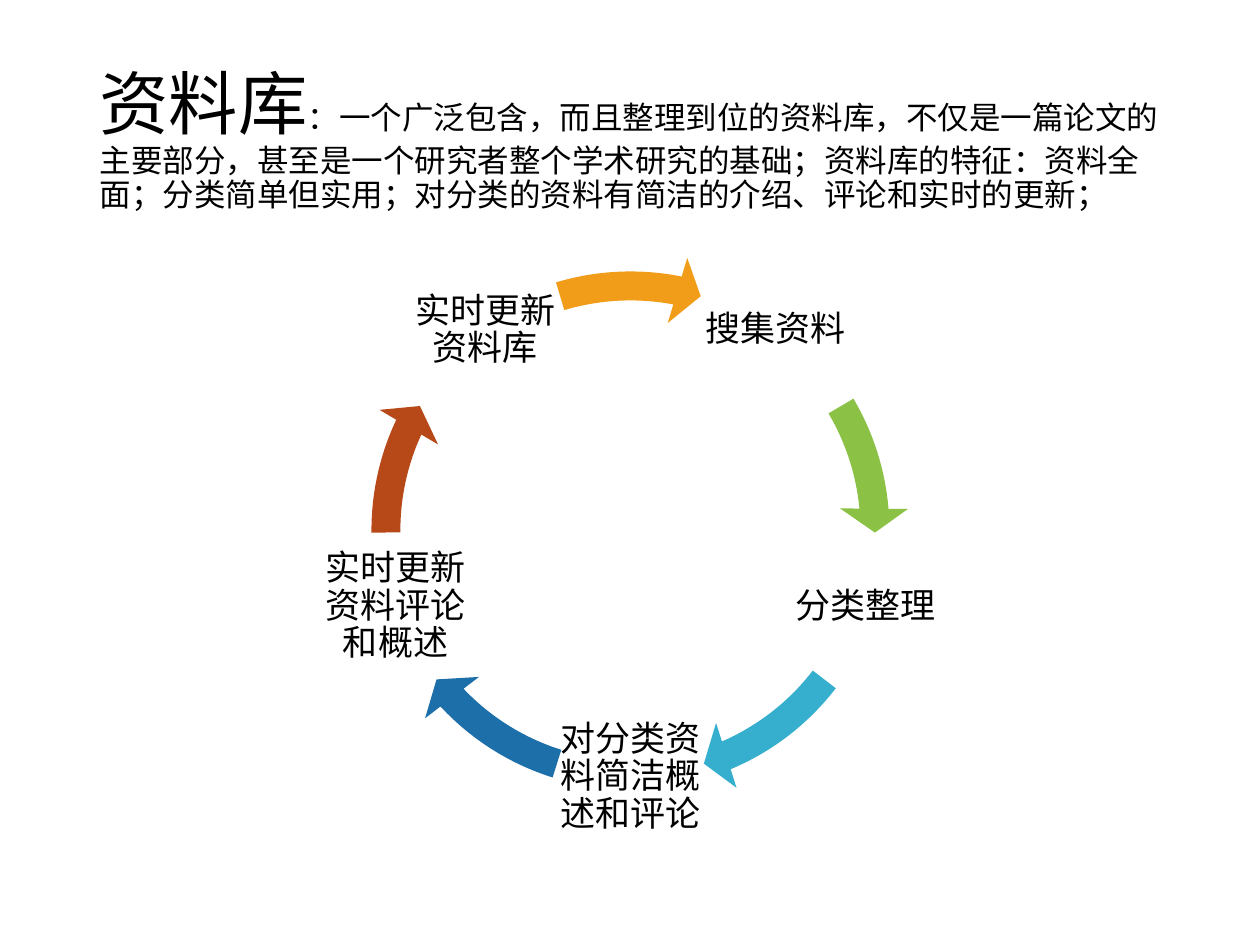
from dataclasses import dataclass
from math import cos, radians, sin

from pptx import Presentation
from pptx import util as u
from pptx.dml.color import RGBColor
from pptx.enum import lang, shapes, text


@dataclass(frozen=True)
class Theme:
    font: str = "Times New Roman"
    ink: str = "000000"
    heading: float = 39.6
    body: float = 18
    label: float = 20
    spacing: float = 0.9


THEME = Theme()
EMU_PER_PX = 914400 / 126

TITLE = "资料库"
DEFINITION = (
    "：一个广泛包含，而且整理到位的资料库，不仅是一篇论文的主要部分，"
    "甚至是一个研究者整个学术研究的基础；资料库的特征：资料全面；"
    "分类简单但实用；对分类的资料有简洁的介绍、评论和实时的更新；"
)
# Step, colour of the arrow that leaves it, arrow start and end in degrees
STEPS = [
    ("搜集资料", "8BC145", 329.43, 354.9),
    ("分类整理", "36AFCE", 37.55, 66.92),
    ("对分类资料简洁概述和评论", "1D6FA9", 107.48, 136.86),
    ("实时更新资料评论和概述", "B74919", 179.51, 204.98),
    ("实时更新资料库", "F19D19", 253.3, 281.1),
]


def px(length):
    return u.Emu(round(length * EMU_PER_PX))


def add_run(paragraph, words, size):
    run = paragraph.add_run()
    run.text = words
    run.font.name = THEME.font
    run.font.size = u.Pt(size)
    run.font.color.rgb = RGBColor.from_string(THEME.ink)
    run.font.language_id = lang.MSO_LANGUAGE_ID.SIMPLIFIED_CHINESE


def format_frame(frame, align):
    frame.word_wrap = True
    frame.auto_size = text.MSO_AUTO_SIZE.NONE
    frame.vertical_anchor = text.MSO_ANCHOR.MIDDLE
    paragraph = frame.paragraphs[0]
    paragraph.alignment = align
    paragraph.line_spacing = THEME.spacing
    return paragraph


def place_title(slide, left, top, width, height):
    title = slide.shapes.title
    title.left, title.top = px(left), px(top)
    title.width, title.height = px(width), px(height)
    paragraph = format_frame(title.text_frame, text.PP_ALIGN.LEFT)
    add_run(paragraph, TITLE, THEME.heading)
    add_run(paragraph, DEFINITION, THEME.body)


def add_step_label(cycle, words, center_x, center_y, side):
    label = cycle.shapes.add_textbox(
        px(center_x - side / 2), px(center_y - side / 2), px(side), px(side))
    frame = label.text_frame
    frame.margin_left = frame.margin_right = px(4)
    frame.margin_top = frame.margin_bottom = px(4)
    add_run(format_frame(frame, text.PP_ALIGN.CENTER), words, THEME.label)


def add_step_arrow(cycle, color, start, end, left, top, side):
    arrow = cycle.shapes.add_shape(
        shapes.MSO_SHAPE.CIRCULAR_ARROW, px(left), px(top), px(side), px(side))
    # Angles are stored in 60000ths of a degree, scaled here by 100000
    values = (0.052, 5.6 * 0.6, end * 0.6, start * 0.6, 0.061)
    for index, value in enumerate(values):
        arrow.adjustments[index] = value
    arrow.shadow.inherit = False
    arrow.fill.solid()
    arrow.fill.fore_color.rgb = RGBColor.from_string(color)
    arrow.line.fill.background()


def place_cycle(slide, left, top, side):
    cycle = slide.shapes.add_group_shape()
    center_x, center_y = left + side / 2, top + side / 2
    radius, label_side = 247, 149
    turn = 360 / len(STEPS)
    for index, (words, color, start, end) in enumerate(STEPS):
        # The labels straddle the top of the ring
        angle = radians(-90 + turn * (index + 0.5))
        add_step_label(cycle, words, center_x + radius * cos(angle),
                       center_y + radius * sin(angle), label_side)
        add_step_arrow(cycle, color, start, end, left, top, side)


def main():
    prs = Presentation()
    prs.slide_width, prs.slide_height = px(1260), px(945)
    slide = prs.slides.add_slide(prs.slide_layouts[5])
    place_title(slide, left=87, top=50, width=1086, height=183)
    place_cycle(slide, left=352, top=252, side=557)
    prs.save("out.pptx")


if __name__ == "__main__":
    main()
